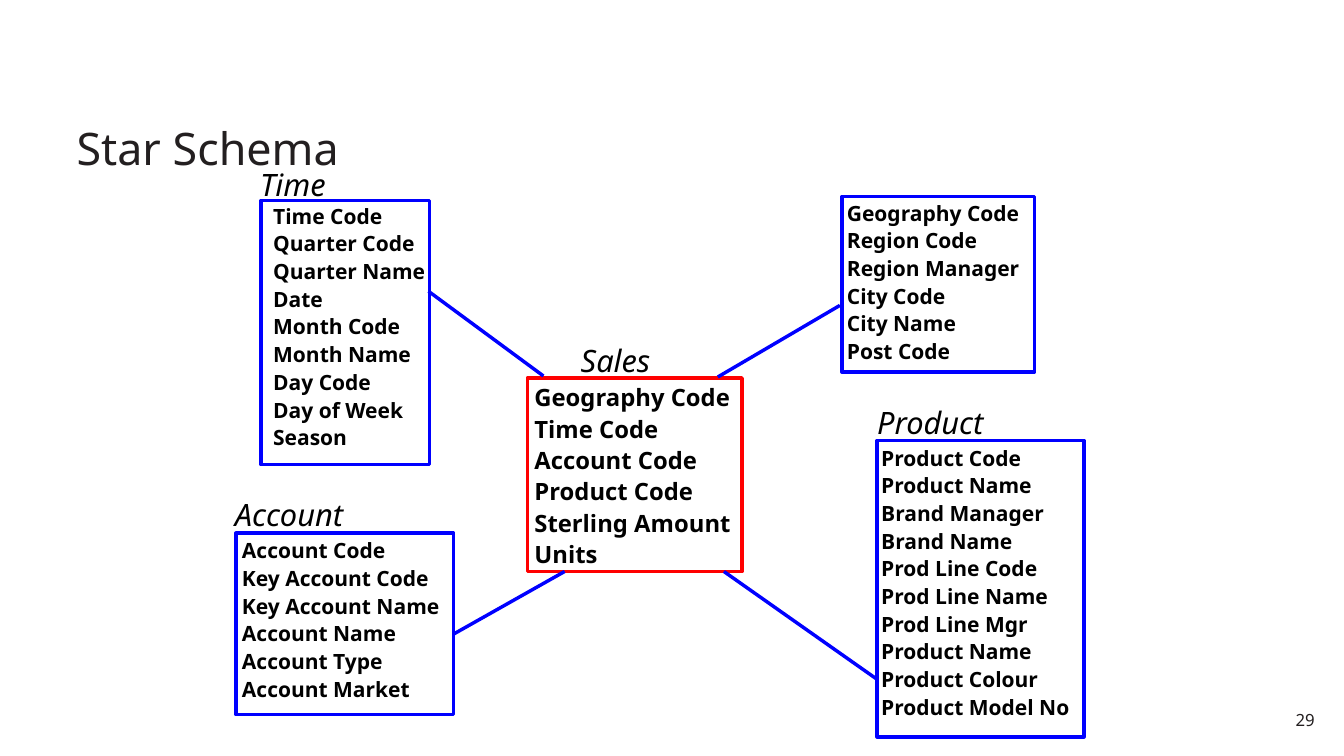
from pptx import Presentation
from pptx.dml.color import RGBColor
from pptx.enum.shapes import MSO_CONNECTOR as CONNECTOR, MSO_SHAPE as SHAPE
from pptx.enum.text import MSO_ANCHOR as ANCHOR, PP_ALIGN as ALIGN
from pptx.oxml.ns import qn
from pptx.util import Inches, Pt
from lxml import etree

FONT = "Noto Sans"
BLUE, RED, BLACK, CHARCOAL = "0000FF", "FF0000", "000000", "231F20"

# Each table: frame, text position and size, line colour, text size, fields
TABLES = [
    ((2.59, 1.99, 1.67, 2.62), (2.71, 1.99, 1.57, 2.59), BLUE, 15,
     ["Time Code", "Quarter Code", "Quarter Name", "Date", "Month Code",
      "Month Name", "Day Code", "Day of Week", "Season"]),
    ((8.35, 1.95, 1.91, 1.74), (8.4, 1.96, 1.9, 1.75), BLUE, 15,
     ["Geography Code", "Region Code", "Region Manager", "City Code",
      "City Name", "Post Code"]),
    ((2.34, 5.29, 2.16, 1.8), (2.4, 5.31, 2.15, 1.72), BLUE, 15,
     ["Account Code", "Key Account Code", "Key Account Name", "Account Name",
      "Account Type", "Account Market"]),
    ((8.7, 4.37, 2.05, 2.94), (8.74, 4.39, 2.03, 2.89), BLUE, 15,
     ["Product Code", "Product Name", "Brand Manager", "Brand Name",
      "Prod Line Code", "Prod Line Name", "Prod Line Mgr", "Product Name",
      "Product Colour", "Product Model No"]),
    ((5.23, 3.75, 2.13, 1.92), (5.3, 3.77, 2.11, 1.88), RED, 17,
     ["Geography Code", "Time Code", "Account Code", "Product Code",
      "Sterling Amount", "Units"]),
]
LINKS = [
    (7.12, 3.74, 8.33, 3.03),
    (7.18, 5.67, 8.7, 6.74),
    (4.25, 2.89, 5.39, 3.73),
    (4.5, 6.29, 5.6, 5.67),
]
TABLE_NAMES = [
    ("Time", (2.58, 1.64, 0.76, 0.35)),
    ("Sales", (5.76, 3.39, 0.85, 0.35)),
    ("Account", (2.33, 4.92, 1.23, 0.35)),
    ("Product", (8.7, 4.01, 1.18, 0.35)),
]


def color(hex_string):
    return RGBColor.from_string(hex_string)


def inches(values):
    return [Inches(value) for value in values]


def add_text(slide, box, lines, *, size, hex_color=BLACK, bold=False,
             italic=False, align=ALIGN.LEFT, anchor=ANCHOR.TOP,
             spacing=1.0, inset=(0, 0), wrap=True):
    """Add one paragraph per line; inset is (horizontal, vertical) in inches."""
    frame = slide.shapes.add_textbox(*inches(box)).text_frame
    frame.word_wrap = wrap
    frame.vertical_anchor = anchor
    frame.margin_left = frame.margin_right = Inches(inset[0])
    frame.margin_top = frame.margin_bottom = Inches(inset[1])
    frame.text = "\n".join(lines)
    for paragraph in frame.paragraphs:
        paragraph.alignment = align
        paragraph.line_spacing = spacing
        for run in paragraph.runs:
            font = run.font
            font.name, font.size = FONT, Pt(size)
            font.bold, font.italic = bold, italic
            font.color.rgb = color(hex_color)


def style_line(line, hex_color):
    line.color.rgb = color(hex_color)
    line.width = Pt(2.48)


def add_frame(slide, box, hex_color):
    shape = slide.shapes.add_shape(SHAPE.ROUNDED_RECTANGLE, *inches(box))
    shape.adjustments[0] = 0
    shape.shadow.inherit = False
    shape.fill.background()
    style_line(shape.line, hex_color)


def add_link(slide, ends):
    connector = slide.shapes.add_connector(CONNECTOR.STRAIGHT, *inches(ends))
    style_line(connector.line, BLUE)
    properties = connector._element.find(qn("p:spPr"))
    etree.SubElement(properties, qn("a:effectLst"))


def main():
    presentation = Presentation()
    presentation.slide_width = Inches(13.33)
    presentation.slide_height = Inches(7.5)
    slide = presentation.slides.add_slide(presentation.slide_layouts[6])

    add_text(slide, (0.68, 0.76, 11.97, 1.02), ["Star Schema"], size=32,
             hex_color=CHARCOAL, anchor=ANCHOR.BOTTOM, spacing=0.9,
             inset=(0.08, 0.04))
    add_text(slide, (12.65, 6.98, 0.47, 0.31), ["29"], size=12,
             hex_color=CHARCOAL, align=ALIGN.RIGHT, inset=(0.08, 0.06))
    for frame_box, text_box, line_color, size, fields in TABLES:
        add_text(slide, text_box, fields, size=size, bold=True, spacing=1.1,
                 wrap=False)
        add_frame(slide, frame_box, line_color)
    for ends in LINKS:
        add_link(slide, ends)
    for name, box in TABLE_NAMES:
        add_text(slide, box, [name], size=22, italic=True, wrap=False)

    presentation.save("out.pptx")


if __name__ == "__main__":
    main()
